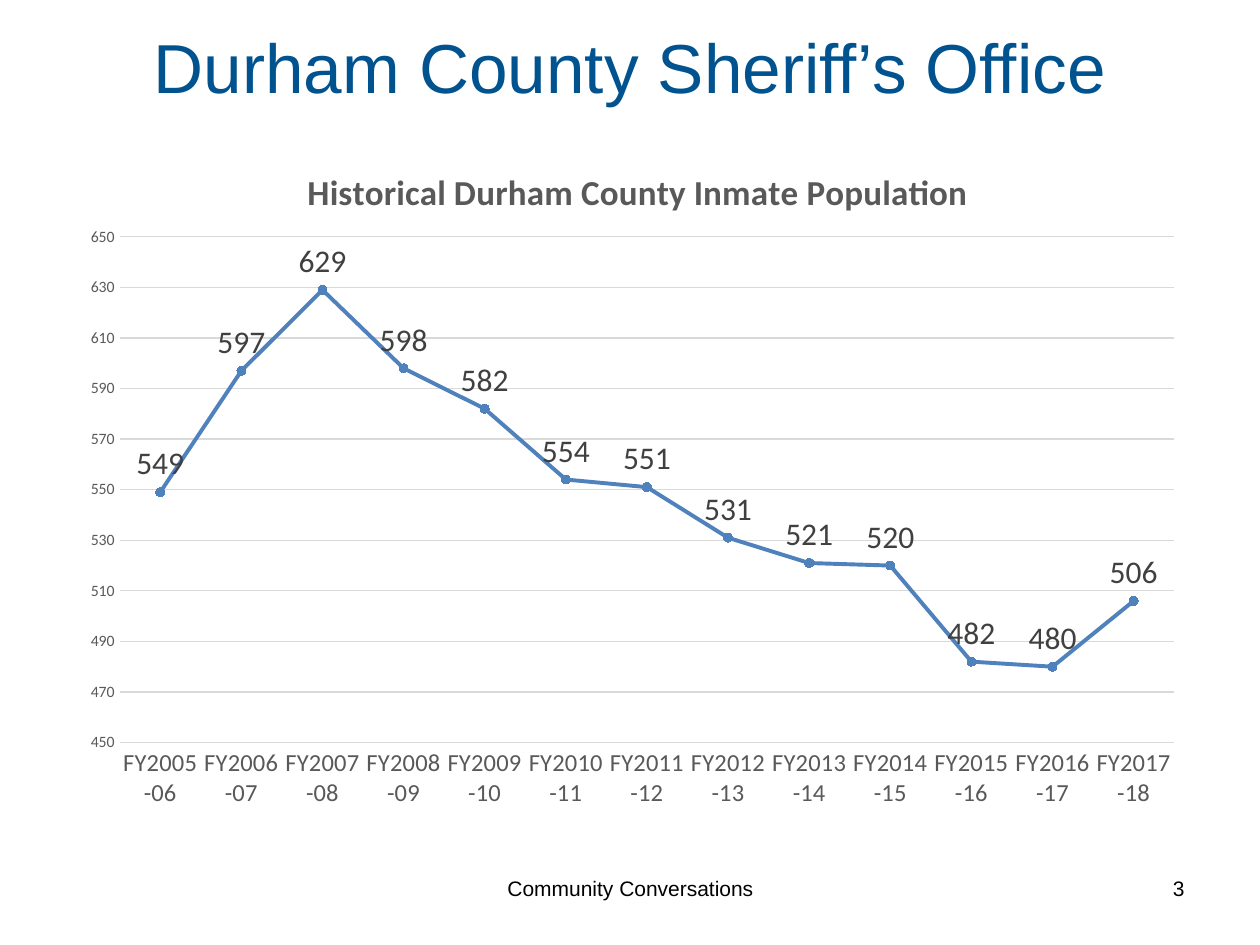
"""Build the slide charting the inmate population of Durham County."""
from dataclasses import dataclass

from lxml.etree import SubElement
from pptx import Presentation
from pptx.chart.data import CategoryChartData
from pptx.dml.color import RGBColor
from pptx.enum.chart import XL_CHART_TYPE, XL_LABEL_POSITION, XL_MARKER_STYLE, XL_TICK_MARK
from pptx.enum.text import MSO_ANCHOR, PP_ALIGN
from pptx.oxml.ns import qn
from pptx.util import Inches, Pt

COLORS = {
    "title": "01538F",
    "footer": "000000",
    "series": "4F81BD",
    "axis": "595959",
    "label": "404040",
    "grid": "D9D9D9",
}
FIRST_YEAR = 2005
POPULATION = (549, 597, 629, 598, 582, 554, 551, 531, 521, 520, 482, 480, 506)


@dataclass(frozen=True)
class Footer:
    text: str
    left: float
    width: float
    alignment: PP_ALIGN


FOOTERS = (
    Footer("Community Conversations", 3.42, 3.17, PP_ALIGN.CENTER),
    Footer("3", 7.17, 2.33, PP_ALIGN.RIGHT),
)


def color(name: str) -> RGBColor:
    return RGBColor.from_string(COLORS[name])


def style_font(font, name: str, size: float, color_name: str, bold: bool = False) -> None:
    font.name = name
    font.size = Pt(size)
    font.bold = bold
    font.color.rgb = color(color_name)


def style_line(line, color_name: str, width: float) -> None:
    line.color.rgb = color(color_name)
    line.width = Pt(width)


def write_text(shape, text: str, size: float, color_name: str, alignment: PP_ALIGN) -> None:
    frame = shape.text_frame
    frame.word_wrap = True
    frame.vertical_anchor = MSO_ANCHOR.MIDDLE
    paragraph = frame.paragraphs[0]
    paragraph.alignment = alignment
    span = paragraph.add_run()
    span.text = text
    style_font(span.font, "Arial", size, color_name)


def add_title(page) -> None:
    title = page.shapes.title
    title.left, title.top = Inches(0.5), Inches(0.3)
    title.width, title.height = Inches(9), Inches(0.45)
    write_text(title, "Durham County Sheriff’s Office", 39.6, "title", PP_ALIGN.CENTER)


def add_footer(page, footer: Footer) -> None:
    box = page.shapes.add_textbox(
        Inches(footer.left), Inches(6.85), Inches(footer.width), Inches(0.4)
    )
    write_text(box, footer.text, 12, "footer", footer.alignment)


def place(element, index: int, **settings: object) -> None:
    for layout in element.findall(qn("c:layout")):
        element.remove(layout)
    layout = SubElement(element, qn("c:layout"))
    manual = SubElement(layout, qn("c:manualLayout"))
    for tag, value in settings.items():
        SubElement(manual, qn(f"c:{tag}")).set("val", str(value))
    element.insert(index, layout)


def style_axes(chart) -> None:
    category_axis, value_axis = chart.category_axis, chart.value_axis
    for axis, size in ((category_axis, 14), (value_axis, 9)):
        axis.major_tick_mark = axis.minor_tick_mark = XL_TICK_MARK.NONE
        style_font(axis.tick_labels.font, "Calibri", size, "axis")
    style_line(category_axis.format.line, "grid", 0.75)
    value_axis.format.line.fill.background()
    value_axis.minimum_scale, value_axis.maximum_scale = 450, 650
    value_axis.major_unit = 20
    style_line(value_axis.major_gridlines.format.line, "grid", 0.75)


def style_series(series) -> None:
    series.smooth = False
    style_line(series.format.line, "series", 2.25)
    marker = series.marker
    marker.style, marker.size = XL_MARKER_STYLE.CIRCLE, 5
    marker.format.fill.solid()
    marker.format.fill.fore_color.rgb = color("series")
    style_line(marker.format.line, "series", 0.75)
    labels = series.data_labels
    labels.show_value = True
    labels.position = XL_LABEL_POSITION.ABOVE
    labels.number_format, labels.number_format_is_linked = "#,##0", False
    style_font(labels.font, "Calibri", 18, "label")


def add_population_chart(page) -> None:
    data = CategoryChartData()
    data.categories = [
        f"FY{year}-{(year + 1) % 100:02d}"
        for year in range(FIRST_YEAR, FIRST_YEAR + len(POPULATION))
    ]
    data.add_series("Series 1", POPULATION)
    chart = page.shapes.add_chart(
        XL_CHART_TYPE.LINE_MARKERS, Inches(0.5), Inches(1), Inches(9), Inches(5.5), data
    ).chart
    chart.has_legend = False
    chart.font.name, chart.font.size = "Calibri", Pt(10)
    chart.has_title = True
    span = chart.chart_title.text_frame.paragraphs[0].add_run()
    span.text = "Historical Durham County Inmate Population"
    style_font(span.font, "Calibri", 20, "axis", bold=True)
    chart.plots[0].vary_by_categories = False
    style_axes(chart)
    style_series(chart.plots[0].series[0])
    title = chart.chart_title._element
    place(title, 1, xMode="edge", yMode="edge", x=0.21, y=0.05)
    plot_area = chart._chartSpace.chart.plotArea
    place(plot_area, 0, layoutTarget="inner", xMode="edge", yMode="edge",
          x=0.05, y=0.16, w=0.93, h=0.73)


def main() -> None:
    deck = Presentation()
    deck.slide_width, deck.slide_height = Inches(10), Inches(7.5)
    page = deck.slides.add_slide(deck.slide_layouts[5])
    add_title(page)
    add_population_chart(page)
    for footer in FOOTERS:
        add_footer(page, footer)
    deck.save("out.pptx")


if __name__ == "__main__":
    main()
